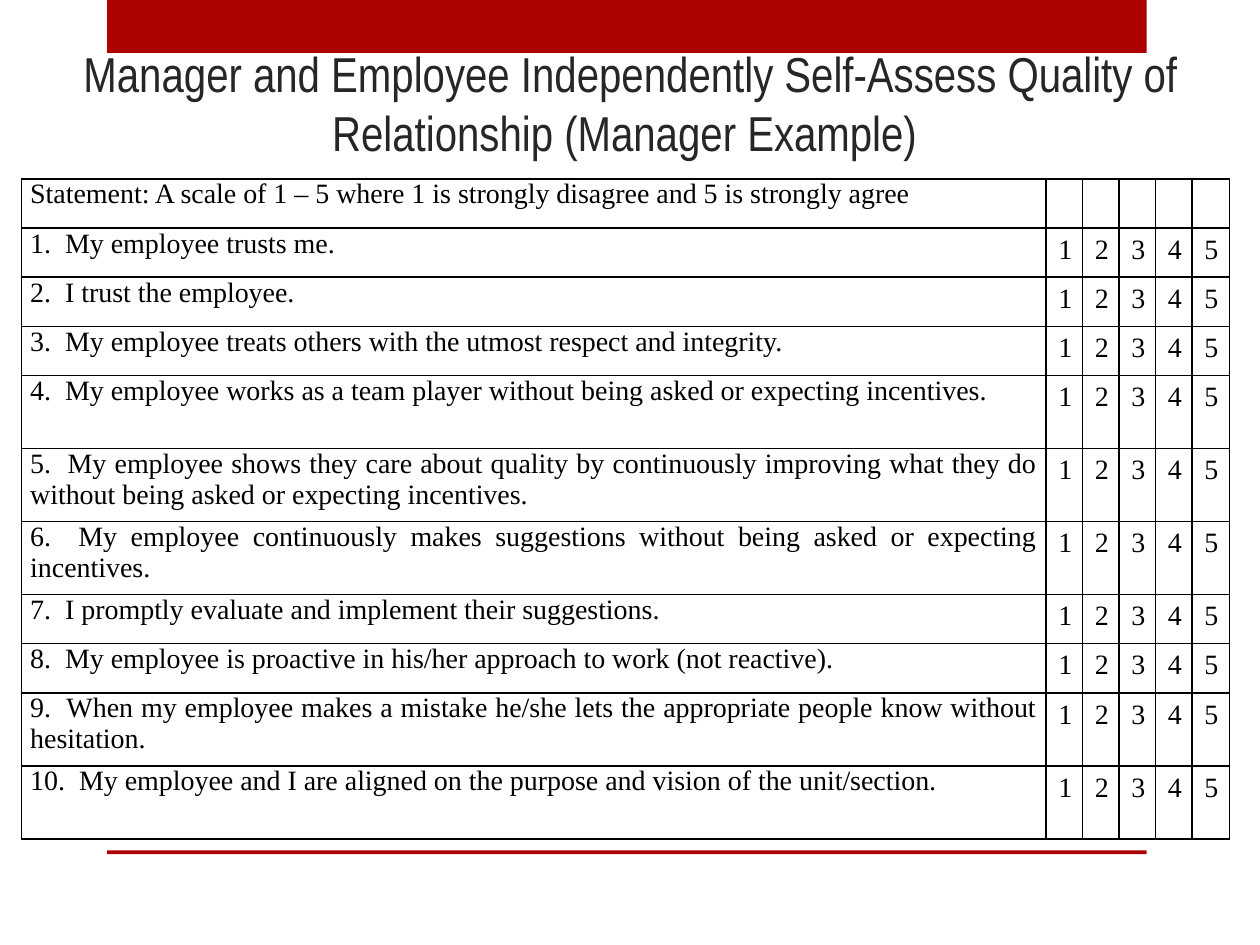
from dataclasses import dataclass

from lxml.etree import SubElement as add_element
from pptx import Presentation
from pptx.dml.color import RGBColor
from pptx.enum.shapes import MSO_SHAPE as Shape
from pptx.enum.text import MSO_ANCHOR as Anchor, PP_ALIGN as Align
from pptx.oxml.ns import qn
from pptx.util import Inches, Pt


@dataclass(frozen=True)
class Theme:
    accent: str = "AD0101"
    title_color: str = "262626"
    ink: str = "000000"
    title_font: str = "Arial Narrow"
    body_font: str = "Times New Roman"
    title_size: int = 28
    body_size: int = 16
    border_width: int = 1


HEADING = "Statement: A scale of 1 – 5 where 1 is strongly disagree and 5 is strongly agree"
STATEMENTS = [
    "My employee trusts me.",
    "I trust the employee.",
    "My employee treats others with the utmost respect and integrity.",
    "My employee works as a team player without being asked or expecting incentives.",
    "My employee shows they care about quality by continuously improving what they do "
    "without being asked or expecting incentives.",
    "My employee continuously makes suggestions without being asked or expecting incentives.",
    "I promptly evaluate and implement their suggestions.",
    "My employee is proactive in his/her approach to work (not reactive).",
    "When my employee makes a mistake he/she lets the appropriate people know without hesitation.",
    "My employee and I are aligned on the purpose and vision of the unit/section.",
]
SCORES = ["1", "2", "3", "4", "5"]
COLUMN_WIDTHS = [8.13] + [0.29] * 4 + [0.3]
SHORT_ROW, TALL_ROW = 0.39, 0.58
TALL_ROWS = {4, 5, 6, 9, 10}

STATEMENT_CELL = {"margin_left": Inches(0.07), "margin_right": Inches(0.07),
                  "margin_top": 0, "margin_bottom": 0}
STATEMENT_PARA = {"alignment": Align.JUSTIFY, "space_before": Pt(6), "space_after": Pt(6)}


def apply_format(target, values):
    for name, value in values.items():
        setattr(target, name, value)


class PageBuilder:
    def __init__(self, page, theme):
        self.page = page
        self.theme = theme

    def style_font(self, font, name, size, color):
        apply_format(font, {"name": name, "size": Pt(size)})
        font.color.rgb = RGBColor.from_string(color)

    def bar(self, left, top, width, height):
        box = self.page.shapes.add_shape(
            Shape.RECTANGLE, Inches(left), Inches(top), Inches(width), Inches(height))
        box.shadow.inherit = False
        box.fill.solid()
        box.fill.fore_color.rgb = RGBColor.from_string(self.theme.accent)
        box.line.fill.background()

    def title(self, text, left, top, width, height):
        box = self.page.shapes.add_textbox(
            Inches(left), Inches(top), Inches(width), Inches(height))
        apply_format(box.text_frame, {"word_wrap": True, "vertical_anchor": Anchor.BOTTOM})
        para = box.text_frame.paragraphs[0]
        para.alignment = Align.CENTER
        span = para.add_run()
        span.text = text
        self.style_font(span.font, self.theme.title_font, self.theme.title_size,
                        self.theme.title_color)

    def border(self, cell):
        properties = cell._tc.get_or_add_tcPr()
        for position, side in enumerate(("a:lnL", "a:lnR", "a:lnT", "a:lnB")):
            line = properties.makeelement(qn(side), {"w": str(Pt(self.theme.border_width))})
            fill = add_element(line, qn("a:solidFill"))
            add_element(fill, qn("a:srgbClr"), val=self.theme.ink)
            properties.insert(position, line)

    def cell(self, cell, text, cell_format, para_format):
        cell.fill.background()
        self.border(cell)
        apply_format(cell, cell_format)
        para = cell.text_frame.paragraphs[0]
        apply_format(para, para_format)
        self.style_font(para.font, self.theme.body_font, self.theme.body_size, self.theme.ink)
        if text:
            span = para.add_run()
            span.text = text
            self.style_font(span.font, self.theme.body_font, self.theme.body_size,
                            self.theme.ink)

    def table(self, rows, left, top, widths, heights):
        frame = self.page.shapes.add_table(
            len(rows), len(widths), Inches(left), Inches(top),
            Inches(sum(widths)), Inches(sum(heights)))
        table = frame.table
        apply_format(table, {"first_row": False, "horz_banding": False})
        for column, width in zip(table.columns, widths):
            column.width = Inches(width)
        for row, height, texts in zip(table.rows, heights, rows):
            row.height = Inches(height)
            for index, (cell, text) in enumerate(zip(row.cells, texts)):
                is_statement = index == 0
                self.cell(cell, text, STATEMENT_CELL if is_statement else {},
                          STATEMENT_PARA if is_statement else {})


def main():
    deck = Presentation()
    apply_format(deck, {"slide_width": Inches(10), "slide_height": Inches(7.5)})
    builder = PageBuilder(deck.slides.add_slide(deck.slide_layouts[6]), Theme())

    # Bars above and below the content
    builder.bar(0.85, 0, 8.25, 0.42)
    builder.bar(0.85, 6.75, 8.25, 0.03)

    # Title
    builder.title("Manager and Employee Independently Self-Assess Quality of "
                  "Relationship (Manager Example) ", 0, 0.08, 10, 1.25)

    # Rating table
    rows = [[HEADING] + [""] * len(SCORES)]
    rows += [[f"{number}.  {statement}"] + SCORES
             for number, statement in enumerate(STATEMENTS, 1)]
    heights = [TALL_ROW if index in TALL_ROWS else SHORT_ROW for index in range(len(rows))]
    builder.table(rows, 0.17, 1.42, COLUMN_WIDTHS, heights)

    deck.save("out.pptx")


if __name__ == "__main__":
    main()
